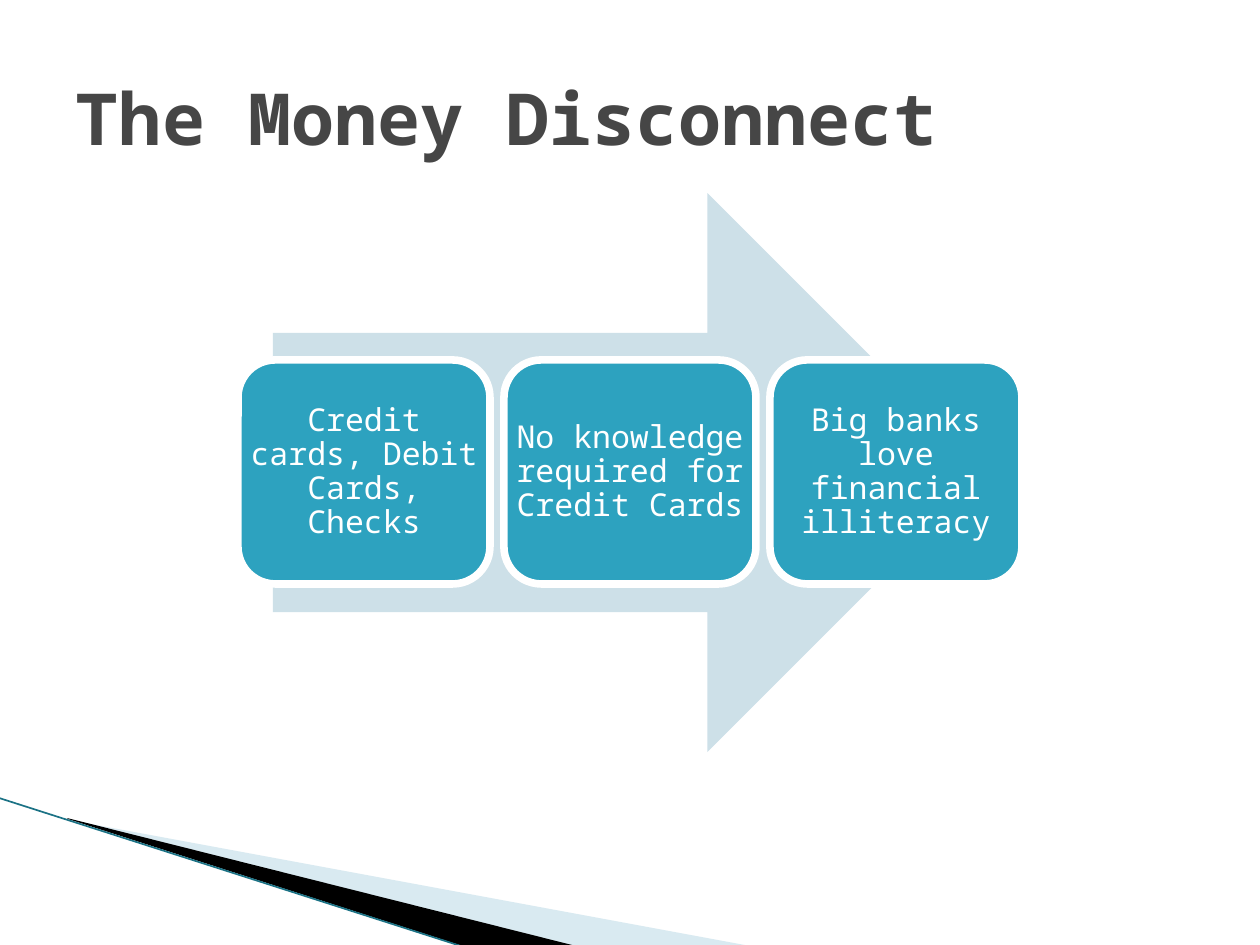
from dataclasses import dataclass
from typing import Optional

import lxml.etree
import pptx
import pptx.dml.color
import pptx.enum.shapes
import pptx.enum.text
import pptx.oxml.ns
import pptx.util

PX = 914400 / 126
FONT = "Noto Sans Mono"
HUES = {
    "title": "464646", "arrow": "CDE0E8", "card": "2DA2BF", "white": "FFFFFF",
    "pale": "A0CBDC", "black": "000000", "edge": "1B7285",
}
KIND = pptx.enum.shapes.MSO_SHAPE
ALIGN = pptx.enum.text.PP_ALIGN
qn = pptx.oxml.ns.qn


@dataclass
class Card:
    text: str
    left: int


@dataclass
class Wedge:
    points: list[tuple[int, int]]
    hue: str
    alpha: Optional[int] = None


def emu(px: float) -> int:
    return round(px * PX)


def color(hue: str) -> pptx.dml.color.RGBColor:
    return pptx.dml.color.RGBColor.from_string(HUES[hue])


def paint(shape, hue: str) -> None:
    shape.shadow.inherit = False
    shape.fill.solid()
    shape.fill.fore_color.rgb = color(hue)
    shape.line.fill.background()


def write(shape, text: str, size: int, hue: str, inset: int, align) -> None:
    frame = shape.text_frame
    frame.text = text
    frame.word_wrap = True
    frame.vertical_anchor = pptx.enum.text.MSO_ANCHOR.MIDDLE
    frame.margin_left = frame.margin_right = emu(inset)
    frame.margin_top = frame.margin_bottom = 0
    para = frame.paragraphs[0]
    para.alignment = align
    font = para.runs[0].font
    font.name, font.size = FONT, pptx.util.Pt(size)
    font.color.rgb = color(hue)


def draw_wedge(slide, wedge: Wedge) -> None:
    first, *rest = wedge.points
    pen = slide.shapes.build_freeform(*first, scale=PX)
    pen.add_line_segments(rest, close=True)
    shape = pen.convert_to_shape()
    paint(shape, wedge.hue)
    if wedge.alpha is not None:
        tint = shape.fill._xPr.find(qn("a:solidFill"))[0]
        lxml.etree.SubElement(tint, qn("a:alpha"), val=str(wedge.alpha * 1000))


def draw_edge(slide) -> None:
    edge = slide.shapes.add_connector(
        pptx.enum.shapes.MSO_CONNECTOR.STRAIGHT,
        emu(-1), emu(798), emu(467), emu(948))
    edge.line.color.rgb = color("edge")
    edge.line.width = pptx.util.Pt(0.95)
    lxml.etree.SubElement(edge._element.spPr, qn("a:effectLst"))


def draw_card(slide, card: Card) -> None:
    shape = slide.shapes.add_shape(
        KIND.ROUNDED_RECTANGLE, emu(card.left), emu(360), emu(252), emu(224))
    paint(shape, "card")
    shape.line.color.rgb = color("white")
    shape.line.width = pptx.util.Pt(4.33)
    write(shape, card.text, 18, "white", 0, ALIGN.CENTER)
    shape.text_frame.paragraphs[0].line_spacing = 0.9


def main() -> None:
    deck = pptx.Presentation()
    deck.slide_width, deck.slide_height = emu(1260), emu(945)
    slide = deck.slides.add_slide(deck.slide_layouts[6])

    # Corner wedges
    wedges = [
        Wedge([(69, 820), (750, 946), (575, 946), (69, 819)], "pale", 40),
        Wedge([(67, 818), (576, 946), (469, 948), (68, 819)], "black"),
    ]
    for wedge in wedges:
        draw_wedge(slide, wedge)
    draw_edge(slide)

    # Title
    title = slide.shapes.add_textbox(emu(63), emu(38), emu(1134), emu(158))
    write(title, "The Money Disconnect", 41, "title", 13, ALIGN.LEFT)
    title.text_frame.paragraphs[0].runs[0].font.bold = True

    # Arrow behind the cards
    arrow = slide.shapes.add_shape(
        KIND.RIGHT_ARROW, emu(273), emu(193), emu(714), emu(559))
    paint(arrow, "arrow")

    # Cards
    texts = [
        "Credit cards, Debit Cards, Checks",
        "No knowledge required for Credit Cards",
        "Big banks love financial illiteracy",
    ]
    for i, text in enumerate(texts):
        draw_card(slide, Card(text, 238 + 266 * i))

    deck.save("out.pptx")


if __name__ == "__main__":
    main()
